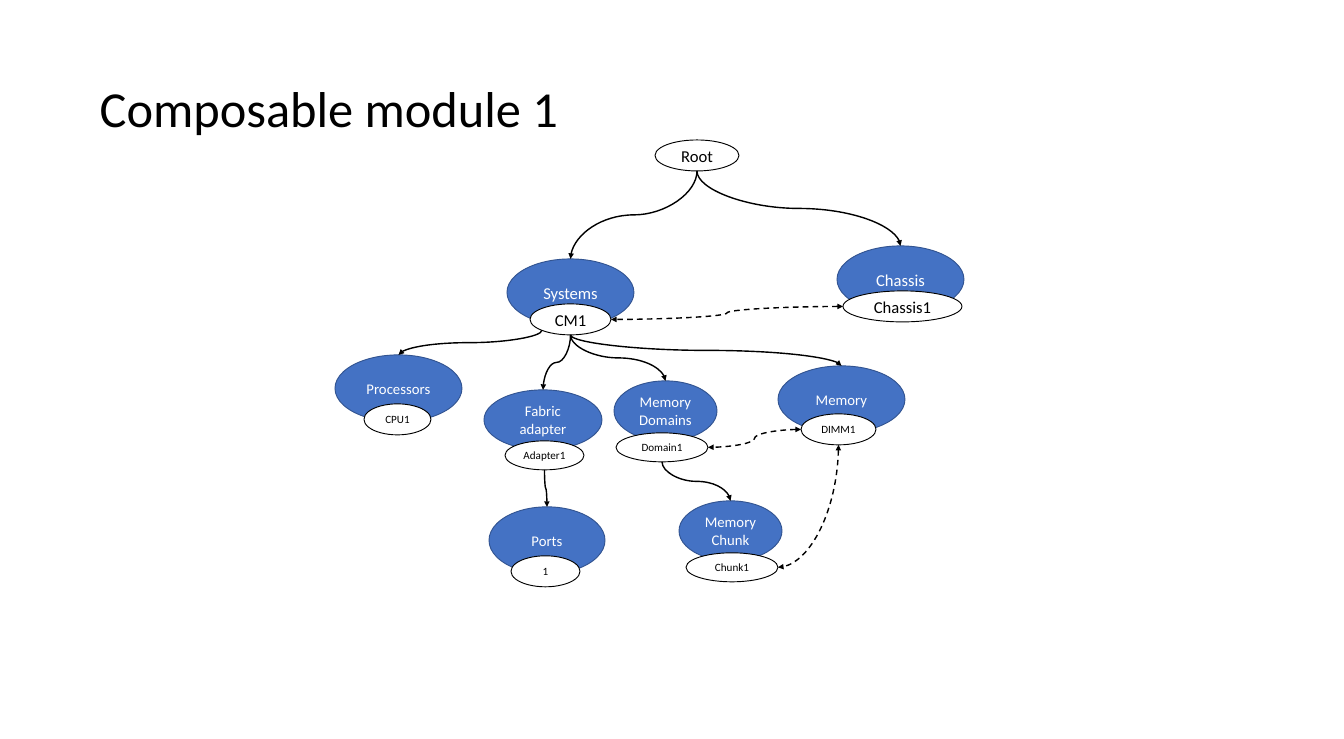
import math
from lxml import etree
from pptx import Presentation
from pptx import util as u
from pptx.dml.color import RGBColor
from pptx.enum import dml, shapes, text
from pptx.oxml.ns import qn

PX = 914400 / 67.2
COLORS = {"blue": "4472C4", "edge": "325491", "white": "FFFFFF", "black": "000000"}
TOP, LEFT, LOWER_LEFT, BOTTOM, RIGHT = 0, 2, 3, 4, 6  # connection sites of an ellipse


def px(n):
    return u.Emu(round(n * PX))


def rgb(name):
    return RGBColor.from_string(COLORS[name])


prs = Presentation()
prs.slide_width, prs.slide_height = u.Inches(20), u.Inches(11)
s = prs.slides.add_slide(prs.slide_layouts[5])

# Title
title = s.shapes.title
for name, value in dict(left=93, top=40, width=1159, height=143).items():
    setattr(title, name, px(value))
tf = title.text_frame
tf.text = "Composable module 1"
tf.auto_size = text.MSO_AUTO_SIZE.NONE
tf.vertical_anchor = text.MSO_ANCHOR.MIDDLE
p = tf.paragraphs[0]
p.alignment, p.line_spacing = text.PP_ALIGN.LEFT, 0.9
font = p.runs[0].font
font.name, font.size = "Calibri", u.Pt(54)
font.color.rgb = rgb("black")

# Resource collections (blue) and their members (white): label, left, top, width, height, size
STYLES = {
    "collection": dict(fill="blue", line="edge", font="white", inset=6),
    "member": dict(fill="white", line="black", font="black", inset=0),
}
NODES = {
    "collection": [
        ("Chassis", 837, 246, 127, 67, 17.8),
        ("Systems", 507, 259, 127, 67, 17.8),
        ("Processors", 335, 355, 127, 67, 15.8),
        ("Memory", 778, 366, 127, 67, 15.8),
        ("Fabric adapter", 484, 390, 118, 60, 15.8),
        ("Memory\vDomains", 614, 381, 103, 60, 15.8),
        ("Ports", 489, 507, 116, 67, 15.8),
        ("Memory\nChunk", 679, 501, 103, 60, 15.8),
    ],
    "member": [
        ("Root", 655, 140, 84, 31, 17.8),
        ("Chassis1", 843, 291, 119, 31, 17.8),
        ("CM1", 530, 304, 81, 31, 17.8),
        ("CPU1", 364, 404, 67, 31, 11.9),
        ("DIMM1", 801, 414, 75, 31, 11.9),
        ("Adapter1", 505, 441, 79, 29, 11.9),
        ("Domain1", 616, 433, 92, 29, 11.9),
        ("1", 511, 556, 69, 31, 11.9),
        ("Chunk1", 686, 553, 92, 29, 11.9),
    ],
}
nodes = {}
for kind, rows in NODES.items():
    style = STYLES[kind]
    for label, *box, size in rows:
        sp = s.shapes.add_shape(shapes.MSO_SHAPE.OVAL, *map(px, box))
        sp.shadow.inherit = False
        sp.fill.solid()
        sp.fill.fore_color.rgb = rgb(style["fill"])
        sp.line.color.rgb = rgb(style["line"])
        sp.line.width = u.Pt(1)
        tf = sp.text_frame
        tf.text = label
        tf.word_wrap = True
        tf.vertical_anchor = text.MSO_ANCHOR.MIDDLE
        tf.margin_left = tf.margin_right = px(style["inset"])
        tf.margin_top = tf.margin_bottom = 0
        for p in tf.paragraphs:
            p.alignment = text.PP_ALIGN.CENTER
            for r in p.runs:
                r.font.name, r.font.size = "Calibri", u.Pt(size)
                r.font.color.rgb = rgb(style["font"])
        nodes[label] = sp

# Curved links: from, site, to, site; dashed links point both ways
LINKS = [
    ("Root", BOTTOM, "Chassis", TOP, False),
    ("Root", BOTTOM, "Systems", TOP, False),
    ("CM1", LOWER_LEFT, "Processors", TOP, False),
    ("CM1", BOTTOM, "Fabric adapter", TOP, False),
    ("CM1", BOTTOM, "Memory\vDomains", TOP, False),
    ("CM1", BOTTOM, "Memory", TOP, False),
    ("Adapter1", BOTTOM, "Ports", TOP, False),
    ("Domain1", BOTTOM, "Memory\nChunk", TOP, False),
    ("Chassis1", LEFT, "CM1", RIGHT, True),
    ("DIMM1", LEFT, "Domain1", RIGHT, True),
    ("DIMM1", BOTTOM, "Chunk1", RIGHT, True),
]
for start, start_site, end, end_site, dashed in LINKS:
    ends = []
    for label, site in ((start, start_site), (end, end_site)):
        sp, angle = nodes[label], math.radians(45 * site)
        ends.append((sp.left + sp.width / 2 * (1 - math.sin(angle)),
                     sp.top + sp.height / 2 * (1 - math.cos(angle))))
    (x1, y1), (x2, y2) = ends
    across, down = abs(x2 - x1), abs(y2 - y1)

    # A link leaving sideways is turned by 180 degrees, one leaving downwards by 90 or 270
    if start_site == LEFT:
        w, h, turn, flip = across, down, 180, "flipV"
    elif x2 > x1:
        w, h, turn, flip = down, across, 270, "flipH"
    else:
        w, h, turn, flip = down, across, 90, None
    left, top = (x1 + x2 - w) / 2, (y1 + y2 - h) / 2
    c = s.shapes.add_connector(shapes.MSO_CONNECTOR.CURVE,
                               *map(round, (left, top, left + w, top + h)))
    c.line.color.rgb = rgb("black")
    c.line.width = u.Pt(1.5)
    if dashed:
        c.line.dash_style = dml.MSO_LINE.DASH

    # Rotation, arrowheads and joined ends
    props = c._element.spPr
    xfrm = props.find(qn("a:xfrm"))
    xfrm.set("rot", str(turn * 60000))
    if flip:
        xfrm.set(flip, "1")
    if start_site == BOTTOM and end_site == RIGHT:
        props.find(qn("a:prstGeom")).set("prst", "curvedConnector2")
    for tag in ("a:headEnd", "a:tailEnd") if dashed else ("a:tailEnd",):
        etree.SubElement(props.find(qn("a:ln")), qn(tag), type="triangle")
    etree.SubElement(props, qn("a:effectLst"))
    joins = c._element.find(".//" + qn("p:cNvCxnSpPr"))
    for tag, label, site in (("a:stCxn", start, start_site), ("a:endCxn", end, end_site)):
        etree.SubElement(joins, qn(tag), id=str(nodes[label].shape_id), idx=str(site))

prs.save("out.pptx")
